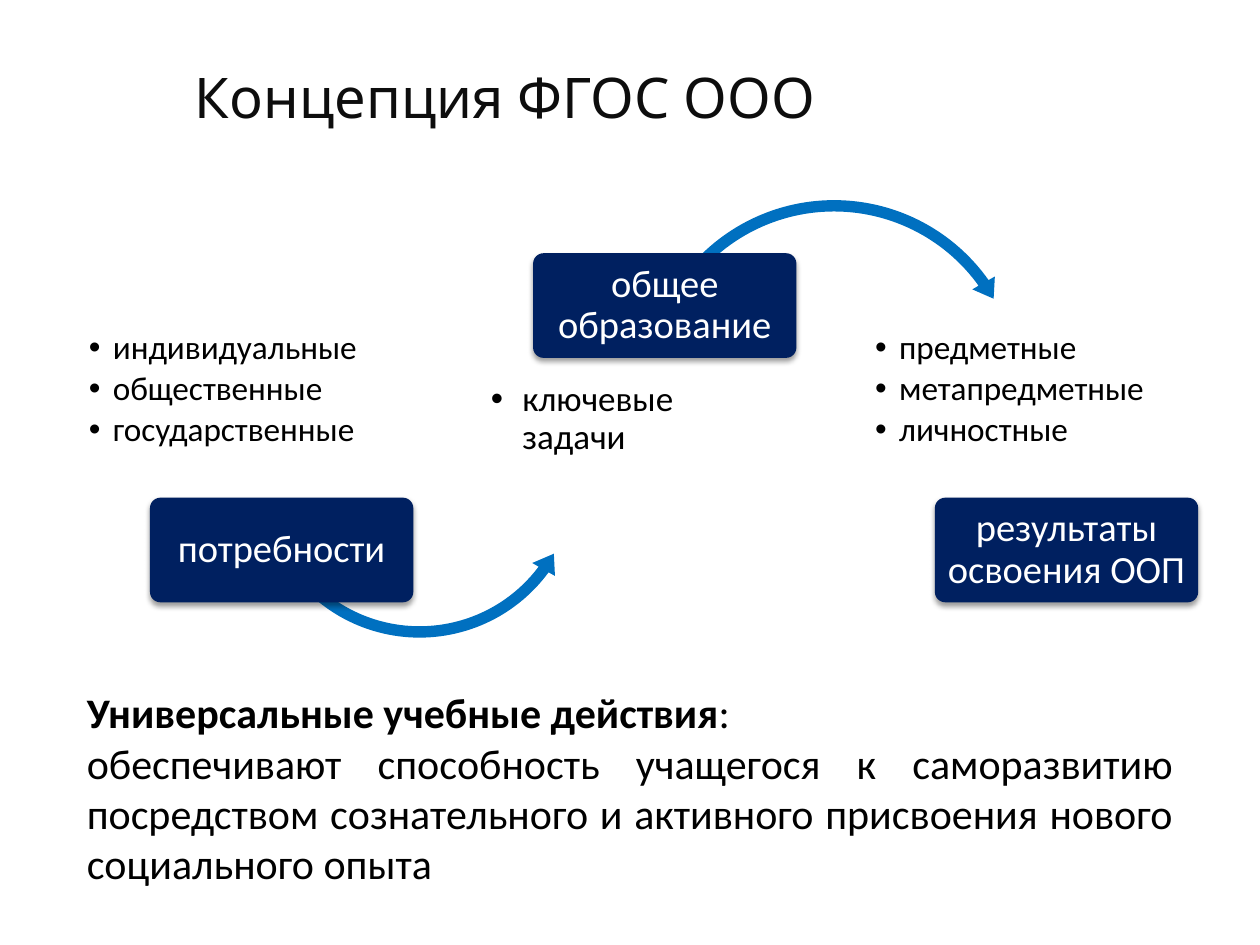
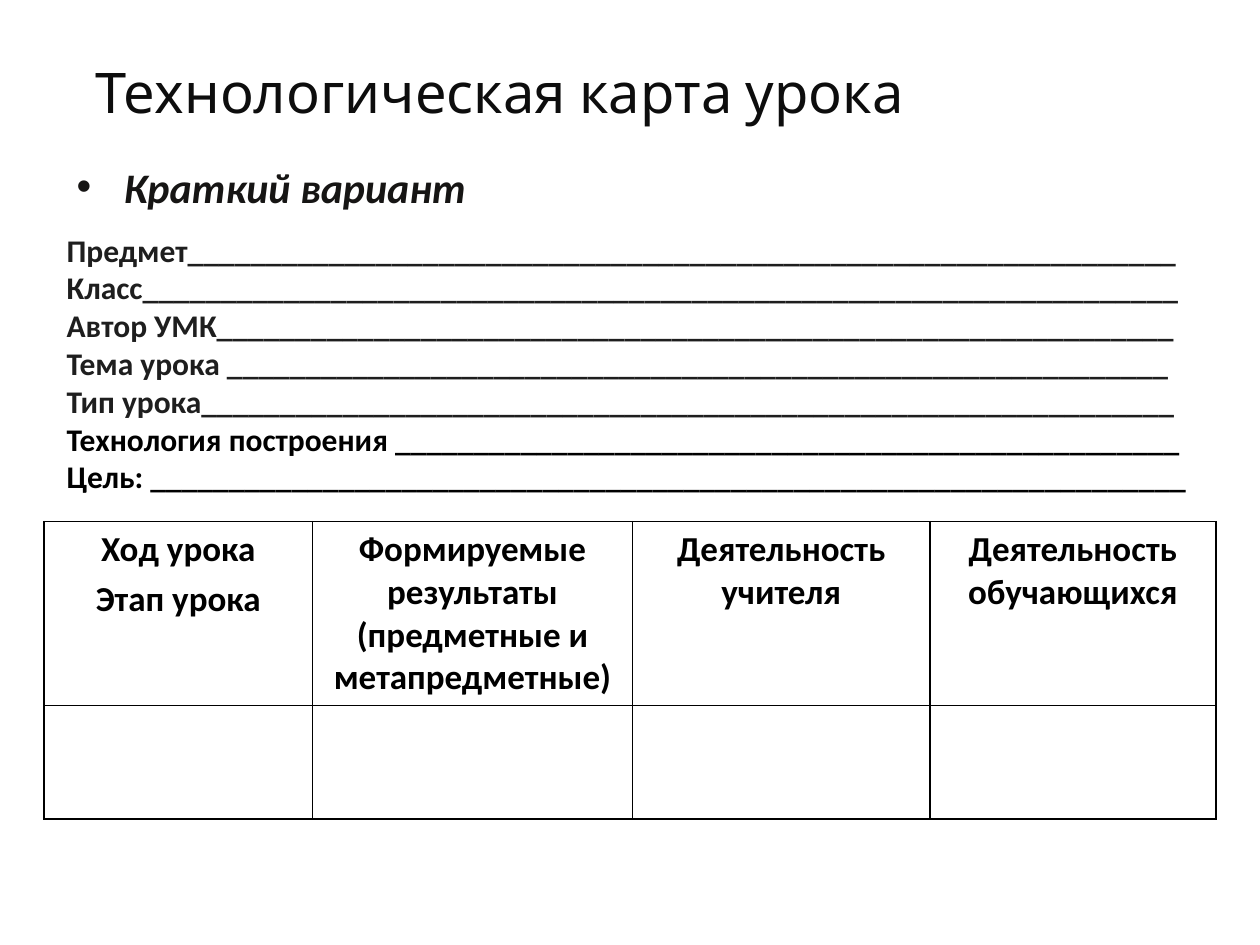
from lxml import etree
from pptx import Presentation
from pptx.dml.color import RGBColor
from pptx.enum import shapes, text
from pptx.oxml import ns
from pptx.util import Pt

BLACK = RGBColor(0, 0, 0)
WHITE = RGBColor(255, 255, 255)
NAVY = RGBColor(0x00, 0x20, 0x60)
BLUE = RGBColor(0x00, 0x70, 0xC0)
TITLE_INK = RGBColor(0x0D, 0x0D, 0x0D)
SUBTITLE_INK = RGBColor(0x16, 0x15, 0x14)
FIELD_INK = RGBColor(0x1E, 0x1E, 0x1E)

BODY_FONT = "Calibri"
TITLE_FONT = "Karla"
LEFT, CENTER, JUSTIFY = text.PP_ALIGN.LEFT, text.PP_ALIGN.CENTER, text.PP_ALIGN.JUSTIFY
TOP, MIDDLE = text.MSO_ANCHOR.TOP, text.MSO_ANCHOR.MIDDLE
KINDS = shapes.MSO_SHAPE

PANEL_TOP, PANEL_HEIGHT = 175, 139.7
NODE_WIDTH, NODE_HEIGHT = 150.5, 59.8


def child(parent, tag, **attributes):
    values = {name: str(value) for name, value in attributes.items()}
    return etree.SubElement(parent, ns.qn(tag), values)


def set_frame(frame, margins=(7.2, 3.6, 7.2, 3.6), anchor=TOP):
    frame.word_wrap = True
    frame.vertical_anchor = anchor
    frame.margin_left, frame.margin_top, frame.margin_right, frame.margin_bottom = map(Pt, margins)


def set_bullet(paragraph, indent):
    properties = paragraph._p.get_or_add_pPr()
    properties.set("marL", str(Pt(indent)))
    properties.set("indent", str(-Pt(indent)))
    child(properties, "a:buFont", typeface="Arial")
    child(properties, "a:buChar", char="•")


def write(frame, lines, size, color=BLACK, align=LEFT, font=BODY_FONT, bold=False,
          italic=False, bullet=None, line_spacing=None, gap=0):
    for index, line in enumerate(lines):
        paragraph = frame.add_paragraph() if index else frame.paragraphs[0]
        if bullet:
            set_bullet(paragraph, bullet)
        paragraph.text = line
        paragraph.alignment = align
        paragraph.line_spacing = line_spacing
        paragraph.space_before = Pt(gap if index else 0)
        paragraph.font.name = font
        paragraph.font.size = Pt(size)
        paragraph.font.bold = bold
        paragraph.font.italic = italic
        paragraph.font.color.rgb = color


def add_text(slide, box, lines, size, anchor=TOP, **style):
    frame = slide.shapes.add_textbox(*map(Pt, box)).text_frame
    set_frame(frame, anchor=anchor)
    write(frame, lines, size, **style)
    return frame


def add_title(slide, box, title):
    add_text(slide, box, [title], 32, MIDDLE, color=TITLE_INK, align=CENTER, font=TITLE_FONT)


def add_filled(slide, kind, box, color, adjustments):
    shape = slide.shapes.add_shape(kind, *map(Pt, box))
    for index, value in enumerate(adjustments):
        shape.adjustments[index] = value
    shape.fill.solid()
    shape.fill.fore_color.rgb = color
    shape.line.fill.background()
    shape.shadow.inherit = False
    return shape


def add_panel(slide, left, width, items, size, indent, top_margin=10):
    panel = add_filled(slide, KINDS.ROUNDED_RECTANGLE,
                       (left, PANEL_TOP, width, PANEL_HEIGHT), WHITE, [0.1])
    fill_color = panel._element.spPr.find(".//" + ns.qn("a:srgbClr"))
    child(fill_color, "a:alpha", val=90000)
    set_frame(panel.text_frame, (10, top_margin, 10, 10))
    write(panel.text_frame, items, size, bullet=indent, line_spacing=0.9, gap=size * 0.15)


def add_node(slide, left, top, label):
    node = add_filled(slide, KINDS.ROUNDED_RECTANGLE,
                      (left, top, NODE_WIDTH, NODE_HEIGHT), NAVY, [0.1])
    effects = node._element.spPr.find(ns.qn("a:effectLst"))
    shadow = child(effects, "a:outerShdw", blurRad=Pt(3.1), dist=Pt(2), dir=90 * 60000,
                   rotWithShape=0)
    child(child(shadow, "a:srgbClr", val="000000"), "a:alpha", val=38000)
    set_frame(node.text_frame, (3.6, 2.2, 3.6, 2.2), MIDDLE)
    write(node.text_frame, [label], 22, WHITE, CENTER, line_spacing=0.9)


def add_arc(slide, kind, left, top, size, adjustments):
    add_filled(slide, kind, (left, top, size, size), BLUE, adjustments)


def set_borders(cell):
    properties = cell._tc.get_or_add_tcPr()
    for index, side in enumerate(("a:lnL", "a:lnR", "a:lnT", "a:lnB")):
        line = etree.Element(ns.qn(side), {"w": str(Pt(1))})
        child(child(line, "a:solidFill"), "a:srgbClr", val=BLACK)
        properties.insert(index, line)


def add_lesson_table(slide, left, top, widths, heights, headers):
    table = slide.shapes.add_table(len(heights), len(widths), Pt(left), Pt(top),
                                   Pt(sum(widths)), Pt(sum(heights))).table
    table.first_row = table.horz_banding = False
    for column, width in zip(table.columns, widths):
        column.width = Pt(width)
    for row, height in zip(table.rows, heights):
        row.height = Pt(height)
    for cell in table.iter_cells():
        cell.fill.background()
        set_borders(cell)
    for column, lines in enumerate(headers):
        write(table.cell(0, column).text_frame, lines, 20, align=CENTER, bold=True, gap=4)


def build_concept(slide):
    add_title(slide, (36, 21.6, 505.4, 67), "Концепция ФГОС ООО")

    add_panel(slide, 36.7, 190.8, ["индивидуальные", "общественные", "государственные"], 19, 13.7)
    add_arc(slide, KINDS.LEFT_CIRCULAR_ARROW, 144, 177.1, 191.5,
            [0.034, 4.179, 21.934, 90.245, 0.039])
    add_node(slide, 85.7, 284.4, "потребности")

    add_panel(slide, 266.4, 169.2, ["ключевые задачи"], 20, 18, top_margin=39)
    add_arc(slide, KINDS.CIRCULAR_ARROW, 364.3, 110.2, 224.6,
            [0.029, 3.51, 194.735, 125.755, 0.033])
    add_node(slide, 304.6, 144.7, "общее образование")

    add_panel(slide, 486, 190.8, ["предметные", "метапредметные", "личностные"], 19, 13.7)
    add_node(slide, 534.2, 284.4, "результаты освоения ООП")

    frame = add_text(slide, (42.5, 388.8, 635, 123.8), [
        "Универсальные учебные действия",
        "обеспечивают способность учащегося к саморазвитию посредством "
        "сознательного и активного присвоения нового социального опыта",
    ], 24, align=JUSTIFY)
    heading = frame.paragraphs[0]
    heading.runs[0].font.bold = True
    heading.add_run().text = ":"


def build_lesson_map(slide):
    add_title(slide, (36, 21.6, 499.7, 61.2), "Технологическая карта урока")
    add_text(slide, (36.7, 88.6, 648, 39.6), ["Краткий вариант"], 24, color=SUBTITLE_INK,
             align=JUSTIFY, bold=True, italic=True, bullet=27)
    add_lesson_table(slide, 25.2, 298.1, (153.4, 182.9, 169.9, 163.4), (105, 64.8), [
        ["Ход урока", "Этап урока"],
        ["Формируемые результаты (предметные и метапредметные)"],
        ["Деятельность учителя"],
        ["Деятельность обучающихся"],
    ])
    fields = [("Предмет", 63), ("Класс", 66), ("Автор УМК", 61), ("Тема урока ", 60),
              ("Тип урока", 62), ("Технология построения ", 50), ("Цель: ", 66)]
    blanks = [label + "_" * count for label, count in fields]
    frame = add_text(slide, (31, 128.2, 663, 159.8), ["\v".join(blanks[:5]), *blanks[5:]], 18,
                     bold=True)
    frame.paragraphs[0].font.color.rgb = FIELD_INK


def main():
    presentation = Presentation()
    presentation.slide_width, presentation.slide_height = Pt(720), Pt(540)
    for build in (build_concept, build_lesson_map):
        build(presentation.slides.add_slide(presentation.slide_layouts[6]))
    presentation.save("out.pptx")


if __name__ == "__main__":
    main()
